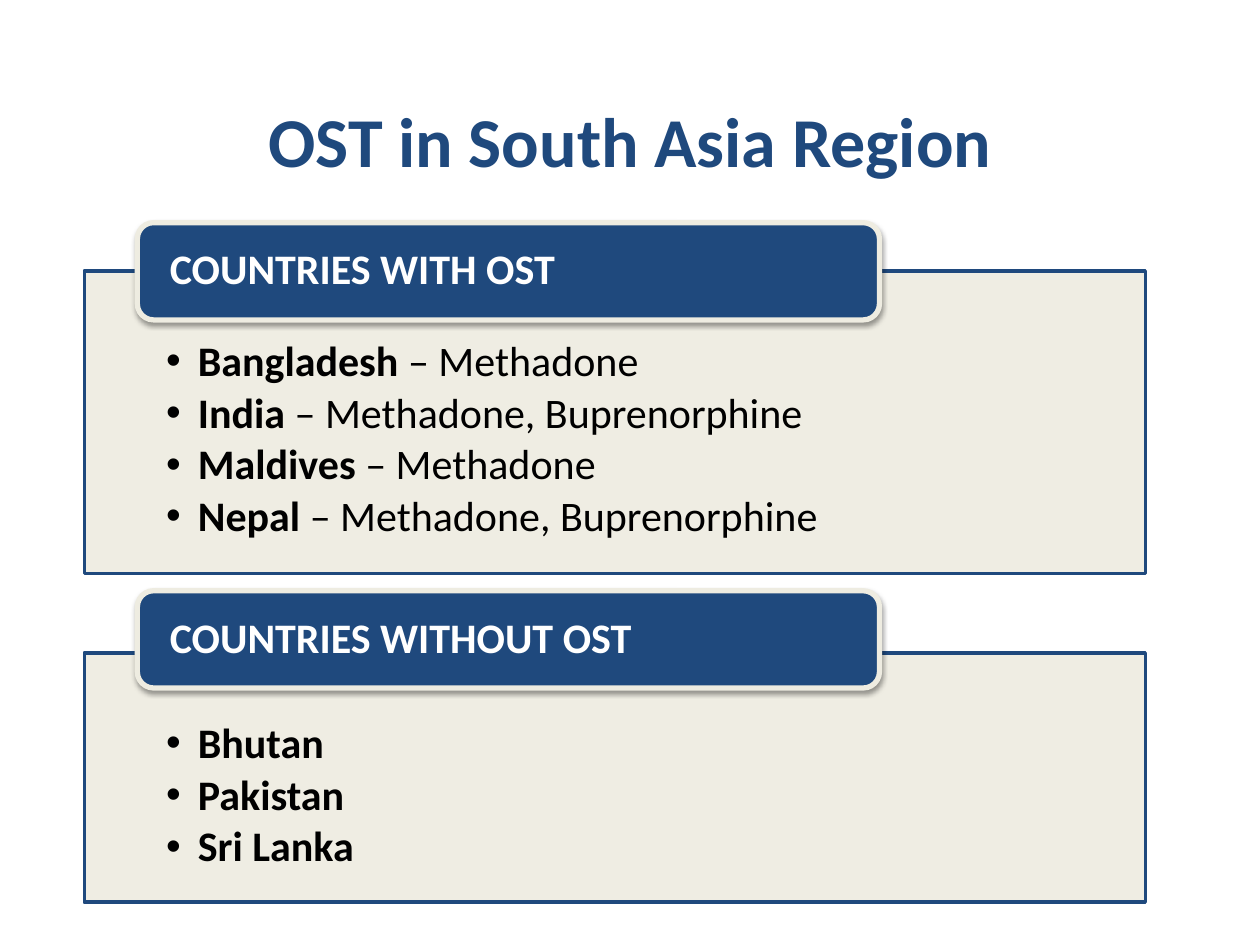
from lxml.etree import SubElement
from pptx import Presentation
from pptx.dml.color import RGBColor
from pptx.enum.shapes import MSO_SHAPE
from pptx.enum.text import MSO_ANCHOR, PP_ALIGN
from pptx.oxml.ns import qn
from pptx.util import Cm, Pt

COLORS = {"navy": "1F497D", "cream": "EEECE1", "white": "FFFFFF", "black": "000000"}
FONT = "Calibri"
REGIONS = [
    {
        "box": (1.7, 5.46, 21.39, 6.1),
        "tab_rise": 0.97,
        "heading": "COUNTRIES WITH OST",
        "countries": [
            ("Bangladesh", "Methadone"),
            ("India", "Methadone, Buprenorphine"),
            ("Maldives", "Methadone"),
            ("Nepal", "Methadone, Buprenorphine"),
        ],
    },
    {
        "box": (1.7, 13.16, 21.39, 5.03),
        "tab_rise": 1.25,
        "heading": "COUNTRIES WITHOUT OST",
        "countries": [("Bhutan", ""), ("Pakistan", ""), ("Sri Lanka", "")],
    },
]


def color(name):
    """Return the named palette colour."""
    return RGBColor.from_string(COLORS[name])


def format_font(font, size, color_name, bold=True):
    """Set the typeface, size, colour and weight of a font."""
    font.name = FONT
    font.size = Pt(size)
    font.bold = bold
    font.color.rgb = color(color_name)


def add_box(slide, preset, box, fill, line, width, insets):
    """Add a filled, outlined shape ready for left-aligned text."""
    shape = slide.shapes.add_shape(preset, *(Cm(length) for length in box))
    shape.fill.solid()
    shape.fill.fore_color.rgb = color(fill)
    shape.line.color.rgb = color(line)
    shape.line.width = Pt(width)
    shape.shadow.inherit = False
    frame = shape.text_frame
    frame.word_wrap = True
    frame.margin_left = frame.margin_right = Cm(insets[0])
    frame.margin_top, frame.margin_bottom = Cm(insets[1]), Cm(insets[2])
    return shape


def set_alpha(color_element, percent):
    """Set the opacity of a colour element."""
    SubElement(color_element, qn("a:alpha"), val=str(percent * 1000))


def add_shadow(shape):
    """Give a shape a soft shadow straight below it."""
    effects = shape.element.spPr.find(qn("a:effectLst"))
    shadow = SubElement(
        effects, qn("a:outerShdw"), blurRad=str(Pt(3.1)), dist=str(Pt(1.6)),
        dir=str(90 * 60000), rotWithShape="0",
    )
    set_alpha(SubElement(shadow, qn("a:srgbClr"), val=COLORS["black"]), 38)


def add_country(paragraph, country, medicines):
    """Write one bulleted country with its medicines."""
    properties = paragraph._p.get_or_add_pPr()
    properties.set("marL", str(Cm(0.64)))
    properties.set("indent", str(Cm(-0.64)))
    SubElement(properties, qn("a:buFont"), typeface="Arial")
    SubElement(properties, qn("a:buChar"), char="•")
    paragraph.level = 1
    paragraph.alignment = PP_ALIGN.LEFT
    paragraph.line_spacing = 0.9
    paragraph.space_after = Pt(3.6)
    name = paragraph.add_run()
    name.text = f"{country} " if medicines else country
    format_font(name.font, 24, "black")
    if medicines:
        detail = paragraph.add_run()
        detail.text = f"– {medicines}"
        format_font(detail.font, 24, "black", bold=False)


def add_region(slide, box, tab_rise, heading, countries):
    """Place a country panel with its heading tab over the top edge."""
    left, top = box[:2]
    panel = add_box(slide, MSO_SHAPE.RECTANGLE, box, "cream", "navy", 2, (1.65, 1.4, 0.48))
    set_alpha(panel.element.spPr.find(qn("a:solidFill"))[0], 90)
    frame = panel.text_frame
    frame.vertical_anchor = MSO_ANCHOR.TOP
    for index, (country, medicines) in enumerate(countries):
        paragraph = frame.add_paragraph() if index else frame.paragraphs[0]
        add_country(paragraph, country, medicines)

    tab_box = (left + 1.07, top - tab_rise, 14.96, 1.96)
    tab = add_box(slide, MSO_SHAPE.ROUNDED_RECTANGLE, tab_box, "navy", "cream", 3, (0.56, 0, 0))
    add_shadow(tab)
    tab.text_frame.vertical_anchor = MSO_ANCHOR.MIDDLE
    tab.text_frame.text = heading
    paragraph = tab.text_frame.paragraphs[0]
    paragraph.alignment = PP_ALIGN.LEFT
    paragraph.line_spacing = 0.9
    format_font(paragraph.runs[0].font, 24, "white")


def add_title(slide, box, text):
    """Move, fill and format the title placeholder."""
    title = slide.shapes.title
    title.left, title.top, title.width, title.height = (Cm(length) for length in box)
    title.text_frame.text = text
    title.text_frame.vertical_anchor = MSO_ANCHOR.MIDDLE
    paragraph = title.text_frame.paragraphs[0]
    paragraph.alignment = PP_ALIGN.CENTER
    format_font(paragraph.runs[0].font, 40, "navy")


def main():
    """Build and save the slide."""
    presentation = Presentation()
    presentation.slide_width, presentation.slide_height = Cm(25.4), Cm(19.05)
    slide = presentation.slides.add_slide(presentation.slide_layouts[5])
    add_title(slide, (1.27, 1.7, 22.86, 2.24), "OST in South Asia Region")
    for region in REGIONS:
        add_region(slide, **region)
    presentation.save("out.pptx")


if __name__ == "__main__":
    main()
